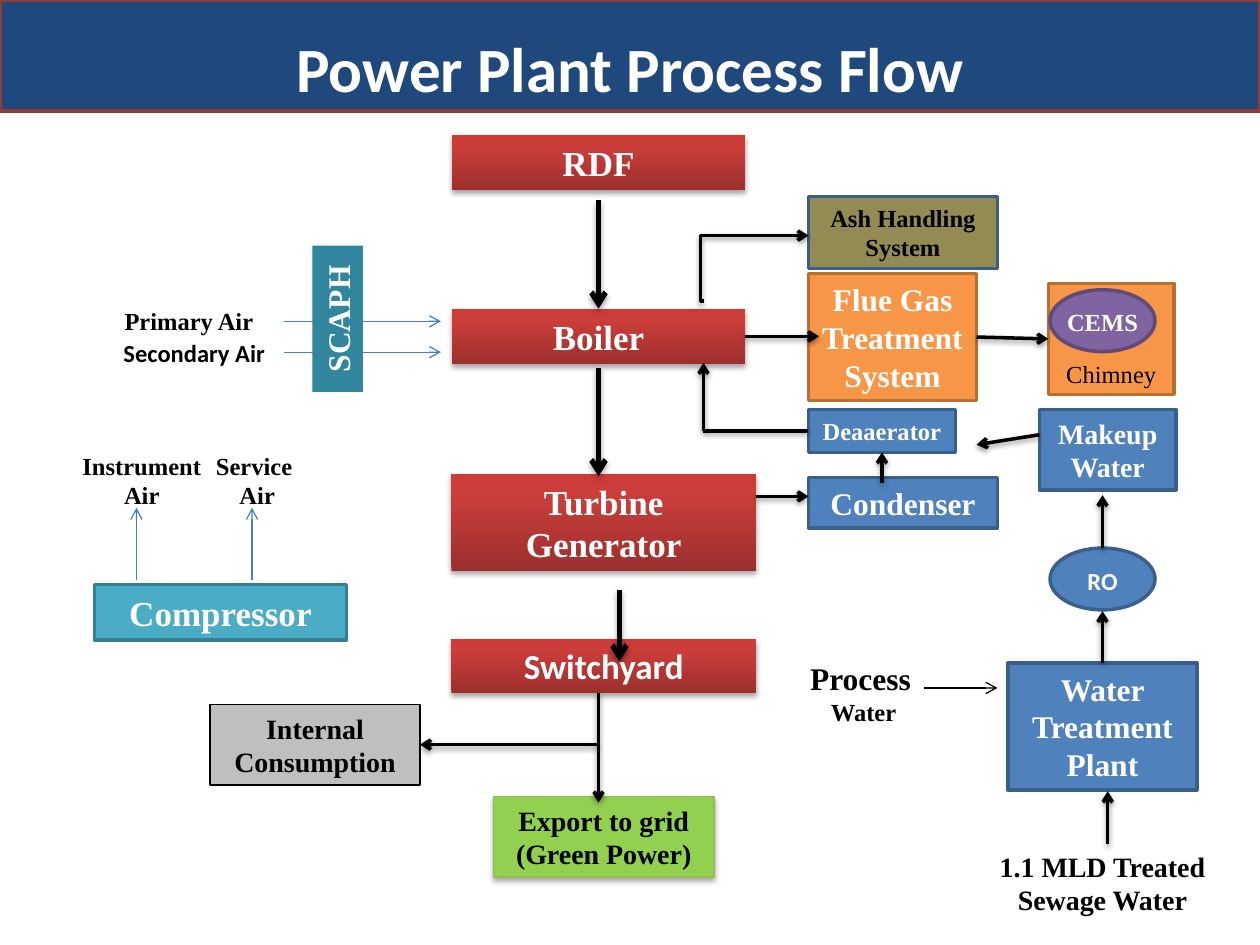
import copy
from dataclasses import dataclass

import pptx
import pptx.dml.color
import pptx.enum.shapes
import pptx.enum.text
import pptx.oxml
import pptx.oxml.ns
import pptx.util

MSO = pptx.enum.shapes.MSO_SHAPE
LINK = pptx.enum.shapes.MSO_CONNECTOR
ANCHOR = pptx.enum.text.MSO_ANCHOR
TOP, LEFT, BOTTOM, RIGHT = range(4)
WIDTH, HEIGHT = pptx.util.Inches(10), pptx.util.Inches(7.5)
COL, ROW = WIDTH / 120, HEIGHT / 75


@dataclass(frozen=True)
class Theme:
    serif: str = "Times New Roman"
    sans: str = "Calibri"
    title: int = 36
    stage: int = 20
    unit: int = 18
    body: int = 16
    small: int = 14
    white: str = "FFFFFF"
    black: str = "000000"
    navy: str = "1F497D"
    maroon: str = "8E3B39"
    blue: str = "4F81BD"
    blue_edge: str = "3A5F8C"
    air_line: str = "4B7EBC"
    orange: str = "F79646"
    orange_edge: str = "B76F34"
    purple: str = "8064A2"
    purple_edge: str = "5F4A78"
    olive: str = "948A54"
    teal: str = "31859C"
    aqua: str = "4BACC6"
    aqua_edge: str = "377F92"
    green: str = "92D050"
    green_edge: str = "98B955"
    gray: str = "BFBFBF"
    red: tuple = ((0, "9C2F2D"), (0.8, "CB3E3A"), (1, "CE3B37"))
    thin: float = 0.75
    medium: float = 2
    thick: float = 3


T = Theme()


@dataclass(frozen=True)
class Area:
    """A region whose parts are placed in columns and rows from its corner."""
    slide: object
    col: float
    row: float

    def point(self, col, row):
        return round((self.col + col) * COL), round((self.row + row) * ROW)

    def frame(self, col, row, cols, rows):
        return *self.point(col, row), round(cols * COL), round(rows * ROW)


def rgb(color):
    return pptx.dml.color.RGBColor.from_string(color)


def add_shadow(sp, alpha, dist):
    spPr = sp._element.spPr
    for old in spPr.findall(pptx.oxml.ns.qn("a:effectLst")):
        spPr.remove(old)
    spPr.append(pptx.oxml.parse_xml(
        f'<a:effectLst {pptx.oxml.ns.nsdecls("a")}><a:outerShdw blurRad="40000" '
        f'dist="{dist}" dir="5400000" rotWithShape="0"><a:srgbClr val="000000">'
        f'<a:alpha val="{alpha}000"/></a:srgbClr></a:outerShdw></a:effectLst>'))


def write(sp, lines, size, color, font=T.serif, bold=True, anchor=ANCHOR.MIDDLE):
    """Each line is a text or a list of (text, size) runs."""
    tf = sp.text_frame
    tf.word_wrap = True
    tf.vertical_anchor = anchor
    for i, line in enumerate(lines):
        p = tf.paragraphs[0] if i == 0 else tf.add_paragraph()
        p.alignment = pptx.enum.text.PP_ALIGN.CENTER
        for text, pt in [(line, size)] if isinstance(line, str) else line:
            r = p.add_run()
            r.text = text
            r.font.name, r.font.size, r.font.bold = font, pptx.util.Pt(pt), bold
            r.font.color.rgb = rgb(color)


def paint_gradient(sp, stops):
    fill = sp.fill
    fill.gradient()
    fill.gradient_angle = 90
    gs_list = sp._element.spPr.find(".//" + pptx.oxml.ns.qn("a:gsLst"))
    gs_list.insert(1, copy.deepcopy(gs_list[0]))
    for stop, (position, color) in zip(fill.gradient_stops, stops):
        stop.position, stop.color.rgb = position, rgb(color)


def add_box(area, frame, lines, fill, edge=None, size=T.unit, color=T.white,
            width=T.medium, shadow=False, kind=MSO.RECTANGLE, **text):
    sp = area.slide.shapes.add_shape(kind, *area.frame(*frame))
    if isinstance(fill, tuple):
        paint_gradient(sp, fill)
    else:
        sp.fill.solid()
        sp.fill.fore_color.rgb = rgb(fill)
    if edge:
        sp.line.color.rgb = rgb(edge)
        sp.line.width = pptx.util.Pt(width)
    else:
        sp.line.fill.background()
    sp.shadow.inherit = False
    if shadow:
        add_shadow(sp, 35, 23000)
    write(sp, lines, size, color, **text)
    return sp


def add_label(area, frame, lines, size=T.small, color=T.black, **text):
    sp = area.slide.shapes.add_textbox(*area.frame(*frame))
    write(sp, lines, size, color, anchor=ANCHOR.TOP, **text)


def add_oval(area, col, row, text, fill, edge, font):
    add_box(area, (col, row, 10, 4.9), [], fill, edge, kind=MSO.OVAL)
    add_label(area, (col, row + 0.9, 10, 3.4), [text], color=T.white, font=font)


def add_flow(area, start, end, width=T.medium, color=T.black, head=True, kind=LINK.STRAIGHT):
    """Each end is a (col, row) point or a (shape, side) joint."""
    joints = [isinstance(e[0], (int, float)) is False for e in (start, end)]
    points = [(0, 0) if joint else area.point(*e) for joint, e in zip(joints, (start, end))]
    cx = area.slide.shapes.add_connector(kind, *points[0], *points[1])
    if joints[0]:
        cx.begin_connect(*start)
    if joints[1]:
        cx.end_connect(*end)
    cx.line.color.rgb = rgb(color)
    cx.line.width = pptx.util.Pt(width)
    if head:
        cx.line._get_or_add_ln().append(pptx.oxml.parse_xml(
            f'<a:tailEnd {pptx.oxml.ns.nsdecls("a")} type="arrow"/>'))
    if width == T.thin:
        cx._element.spPr.append(pptx.oxml.parse_xml(
            f'<a:effectLst {pptx.oxml.ns.nsdecls("a")}/>'))
    else:
        add_shadow(cx, *((35, 23000) if width == T.thick else (38, 20000)))
    return cx


def draw_header(area):
    add_box(area, (0, 0, 120, 8.8), ["Power Plant Process Flow"], T.navy, T.maroon,
            size=T.title, font=T.sans, anchor=ANCHOR.BOTTOM)


def draw_main_chain(area):
    """Fuel to switchyard; returns the boiler for the flue gas path."""
    stages = [("RDF", 0, 28, 4.4, T.serif), ("Boiler", 13.8, 28, 4.4, T.serif),
              ("Turbine Generator", 26.9, 29, 7.7, T.serif), ("Switchyard", 40, 29, 4.3, T.sans)]
    boxes = [add_box(area, (0, row, cols, rows), [name], T.red, size=T.stage, shadow=True, font=font)
             for name, row, cols, rows, font in stages]
    boiler = boxes[1]
    add_flow(area, (14, 5.2), (boiler, TOP), T.thick)
    add_flow(area, (14, 18.5), (14, 27.1), T.thick)
    add_flow(area, (16, 36.1), (16, 41.8), T.thick)
    return boiler


def draw_power_output(area):
    add_box(area, (27, 8.2, 21, 6.4), ["Export to grid", "(Green Power)"], T.green, T.green_edge,
            T.body, T.black, T.thin, shadow=True)
    internal = add_box(area, (0, 0.9, 20, 6.4), ["Internal Consumption"], T.gray, T.black,
                       T.body, T.black, T.thin)
    add_flow(area, (37, 0), (37, 8.7))
    add_flow(area, (37, 4.1), (internal, RIGHT))


def draw_flue_gas(area, boiler):
    add_box(area, (10, 0, 18, 5.7), ["Ash Handling System"], T.olive, T.blue_edge, T.small, T.black)
    treatment = add_box(area, (10, 6.1, 16, 10.1), ["Flue Gas Treatment System"], T.orange, T.orange_edge)
    chimney = add_box(area, (32.84, 6.9, 12, 8.8), ["Chimney"], T.orange, T.orange_edge,
                      T.small, T.black, bold=False, anchor=ANCHOR.BOTTOM)
    add_oval(area, 33, 7.4, "CEMS", T.purple, T.purple_edge, T.serif)
    ash = add_flow(area, (0, 8.3), (10, 3.1), kind=LINK.ELBOW)
    ash._element.spPr.prstGeom.get_or_add_avLst().append(pptx.oxml.parse_xml(
        f'<a:gd {pptx.oxml.ns.nsdecls("a")} name="adj1" fmla="val -2700"/>'))
    add_flow(area, (boiler, RIGHT), (11, 11.1))
    add_flow(area, (treatment, RIGHT), (chimney, LEFT))


def draw_condensate(area):
    deaerator = add_box(area, (10, 0, 14, 3.4), ["Deaaerator"], T.blue, T.blue_edge, T.small)
    add_box(area, (10, 5.4, 18, 4), ["Condenser"], T.blue, T.blue_edge)
    add_flow(area, (0, 1.7), (0, -3.7))
    add_flow(area, (0, 1.7), (deaerator, LEFT), head=False)
    add_flow(area, (17, 5.8), (deaerator, BOTTOM))
    add_flow(area, (5, 6.9), (10, 6.9))


def draw_water(area):
    add_box(area, (24, 0, 13, 6.4), ["Makeup", "Water"], T.blue, T.blue_edge, T.body)
    add_oval(area, 25, 11, "RO", T.blue, T.blue_edge, T.sans)
    plant = add_box(area, (21, 20.1, 18, 10.1), ["Water Treatment Plant"], T.blue, T.blue_edge)
    add_label(area, (18, 34.4, 24, 6.4), ["1.1 MLD Treated Sewage Water"], T.body)
    add_label(area, (0.5, 19.3, 13.5, 6.4), [[("Process", T.unit), (" ", T.small)], "Water"])
    add_flow(area, (30.5, 34.5), (30.5, 30.3))
    add_flow(area, (plant, TOP), (30, 16))
    add_flow(area, (30, 11), (30, 6.8))
    add_flow(area, (24, 2), (18, 2.8))
    add_flow(area, (13, 22.1), (20, 22.1), T.thin)


def draw_combustion_air(area):
    add_label(area, (0, 0.5, 18, 3.4), ["Primary Air"])
    add_label(area, (1, 3, 17, 3.3), ["Secondary Air"], font=T.sans)
    for row in (2.2, 4.65):
        add_flow(area, (18, row), (33, row), T.thin, T.air_line)
    scaph = add_box(area, (16.2, 0, 13.92, 4), ["SCAPH"], T.teal)
    scaph.rotation = 270


def draw_compressed_air(area):
    add_box(area, (3, 11.1, 24, 4.4), ["Compressor"], T.aqua, T.aqua_edge, T.stage)
    for name, col, cols, arrow in [("Instrument", 0, 15, 7), ("Service ", 13, 11, 18)]:
        add_flow(area, (arrow, 10.7), (arrow, 5), T.thin, T.air_line)
        add_label(area, (col, 0, cols, 5.7), [name, "Air"])


def main():
    prs = pptx.Presentation()
    prs.slide_width, prs.slide_height = WIDTH, HEIGHT
    s = prs.slides.add_slide(prs.slide_layouts[6])
    boiler = draw_main_chain(Area(s, 43, 10.7))
    draw_power_output(Area(s, 20, 55))
    draw_flue_gas(Area(s, 67, 15.6), boiler)
    draw_condensate(Area(s, 67, 32.5))
    draw_water(Area(s, 75, 32.5))
    draw_combustion_air(Area(s, 9, 23.3))
    draw_compressed_air(Area(s, 6, 35.3))
    draw_header(Area(s, 0, 0))
    prs.save("out.pptx")


if __name__ == "__main__":
    main()
